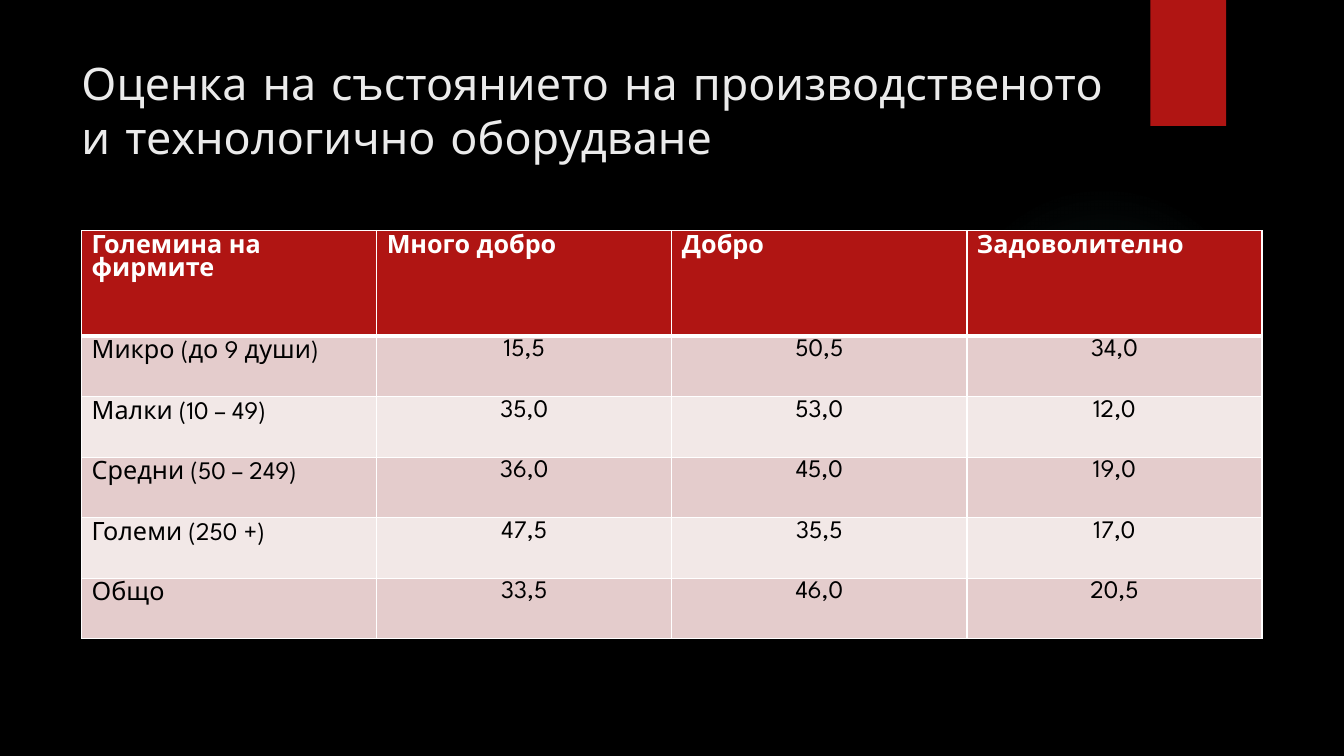
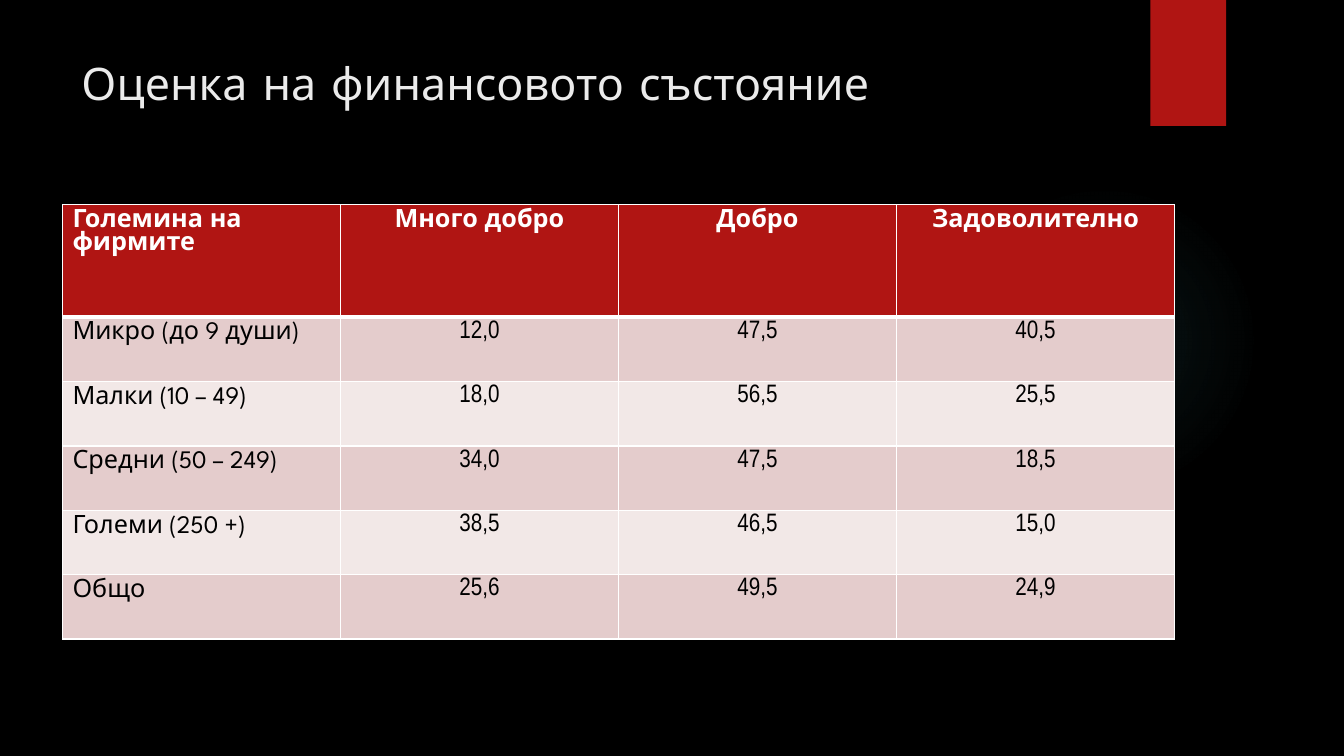
from lxml import etree
from pptx import Presentation
from pptx.dml.color import RGBColor
from pptx.enum.shapes import MSO_SHAPE
from pptx.enum.text import MSO_ANCHOR, MSO_AUTO_SIZE, PP_ALIGN
from pptx.oxml import parse_xml
from pptx.oxml.ns import nsdecls, qn
from pptx.util import Pt

BLACK, WHITE, RED = "000000", "FFFFFF", "B01513"
TITLE_COLOR, GLOW = "EBEBEB", "50B9C1"
BANDS = ("E4CCCC", "F2E8E7")
TITLE_FONT, TABLE_FONT, NARROW_FONT = "Comic Neue", "League Spartan", "Arial Narrow"

HEADERS = ("Големина на фирмите", "Много добро", "Добро", "Задоволително")
SIZES = ("Микро (до 9 души)", "Малки (10 – 49)", "Средни (50 – 249)",
         "Големи (250 +)", "Общо")
EQUIPMENT = (("15,5", "50,5", "34,0"), ("35,0", "53,0", "12,0"),
             ("36,0", "45,0", "19,0"), ("47,5", "35,5", "17,0"),
             ("33,5", "46,0", "20,5"))
FINANCES = (("12,0", "47,5", "40,5"), ("18,0", "56,5", "25,5"),
            ("34,0", "47,5", "18,5"), ("38,5", "46,5", "15,0"),
            ("25,6", "49,5", "24,9"))


def rgb(value):
    return RGBColor.from_string(value)


def style(p, font, size, color, bold=False, align=PP_ALIGN.LEFT):
    p.font.name, p.font.size, p.font.bold = font, Pt(size), bold
    p.font.color.rgb = rgb(color)
    p.line_spacing, p.alignment = 1.0, align


def add_plain_shape(s, kind, x, y, w, h, color):
    sp = s.shapes.add_shape(kind, Pt(x), Pt(y), Pt(w), Pt(h))
    sp.shadow.inherit = False
    sp.fill.solid()
    sp.fill.fore_color.rgb = rgb(color)
    sp.line.fill.background()
    return sp


def fade_out(sp, color):
    """Replace the fill by a faint radial glow."""
    stops = "".join(
        f'<a:gs pos="{pos}000"><a:srgbClr val="{color}">'
        f'<a:alpha val="{alpha}000"/></a:srgbClr></a:gs>'
        for pos, alpha in ((0, 7), (36, 6), (69, 0)))
    grad = parse_xml(
        f'<a:gradFill {nsdecls("a")}><a:gsLst>{stops}</a:gsLst><a:path path="circle">'
        '<a:fillToRect l="50000" t="50000" r="50000" b="50000"/></a:path></a:gradFill>')
    solid = sp.element.spPr.find(qn("a:solidFill"))
    solid.getparent().replace(solid, grad)


def add_backdrop(s):
    glow = add_plain_shape(s, MSO_SHAPE.OVAL, 677.5, 131.8, 221.8, 221.8, GLOW)
    fade_out(glow, GLOW)
    add_plain_shape(s, MSO_SHAPE.RECTANGLE, 821.8, 0, 54, 90, RED)


def set_title(s, text, width):
    title = s.shapes.title
    title.left, title.top, title.width, title.height = Pt(51), Pt(36), Pt(width), Pt(110)
    tf = title.text_frame
    tf.text = text
    tf.word_wrap, tf.auto_size = True, MSO_AUTO_SIZE.NONE
    tf.vertical_anchor = MSO_ANCHOR.TOP
    style(tf.paragraphs[0], TITLE_FONT, 32, TITLE_COLOR)


def set_borders(cell, bottom):
    tc_pr = cell._tc.get_or_add_tcPr()
    for side, width in (("L", 1), ("R", 1), ("T", 1), ("B", bottom)):
        ln = etree.SubElement(tc_pr, qn(f"a:ln{side}"), w=str(Pt(width)))
        fill = etree.SubElement(ln, qn("a:solidFill"))
        etree.SubElement(fill, qn("a:srgbClr"), val=WHITE)


def fill_cell(cell, text, fill, bottom=1, **text_style):
    set_borders(cell, bottom)
    cell.fill.solid()
    cell.fill.fore_color.rgb = rgb(fill)
    cell.text = text
    style(cell.text_frame.paragraphs[0], size=18, **text_style)


def add_ratings(s, x, y, w, header_h, row_h, values, header_align, number_font):
    rows, cols = len(SIZES) + 1, len(HEADERS)
    frame = s.shapes.add_table(rows, cols, Pt(x), Pt(y), Pt(w),
                               Pt(header_h + row_h * len(SIZES)))
    table = frame.table
    table.horz_banding = False
    for col in table.columns:
        col.width = Pt(w / cols)
    for i, row in enumerate(table.rows):
        row.height = Pt(row_h if i else header_h)

    for j, text in enumerate(HEADERS):
        fill_cell(table.cell(0, j), text, RED, bottom=3, font=TABLE_FONT, color=WHITE,
                  bold=True, align=header_align if j else PP_ALIGN.LEFT)
    for i, (label, numbers) in enumerate(zip(SIZES, values)):
        band = BANDS[i % 2]
        fill_cell(table.cell(i + 1, 0), label, band, font=TABLE_FONT, color=BLACK)
        for j, number in enumerate(numbers, 1):
            cell = table.cell(i + 1, j)
            cell.margin_left = cell.margin_right = Pt(5)
            cell.margin_top, cell.margin_bottom = Pt(2), 0
            fill_cell(cell, number, band, font=number_font, color=BLACK,
                      align=PP_ALIGN.CENTER)


def add_rating_slide(prs, title, title_w, **table):
    s = prs.slides.add_slide(prs.slide_layouts[5])
    add_backdrop(s)
    set_title(s, title, title_w)
    add_ratings(s, **table)


def main():
    prs = Presentation()
    prs.slide_width, prs.slide_height = Pt(960), Pt(540)
    background = prs.slide_master.background.fill
    background.solid()
    background.fore_color.rgb = rgb(BLACK)

    add_rating_slide(
        prs, "Оценка на състоянието на производственото и технологично оборудване", 762,
        x=58.3, y=164.8, w=843.2, header_h=75.4, row_h=43.2, values=EQUIPMENT,
        header_align=PP_ALIGN.LEFT, number_font=TABLE_FONT)
    add_rating_slide(
        prs, "Оценка на финансовото състояние", 741,
        x=44.6, y=146.2, w=794.4, header_h=80.4, row_h=46, values=FINANCES,
        header_align=PP_ALIGN.CENTER, number_font=NARROW_FONT)
    prs.save("out.pptx")


if __name__ == "__main__":
    main()
